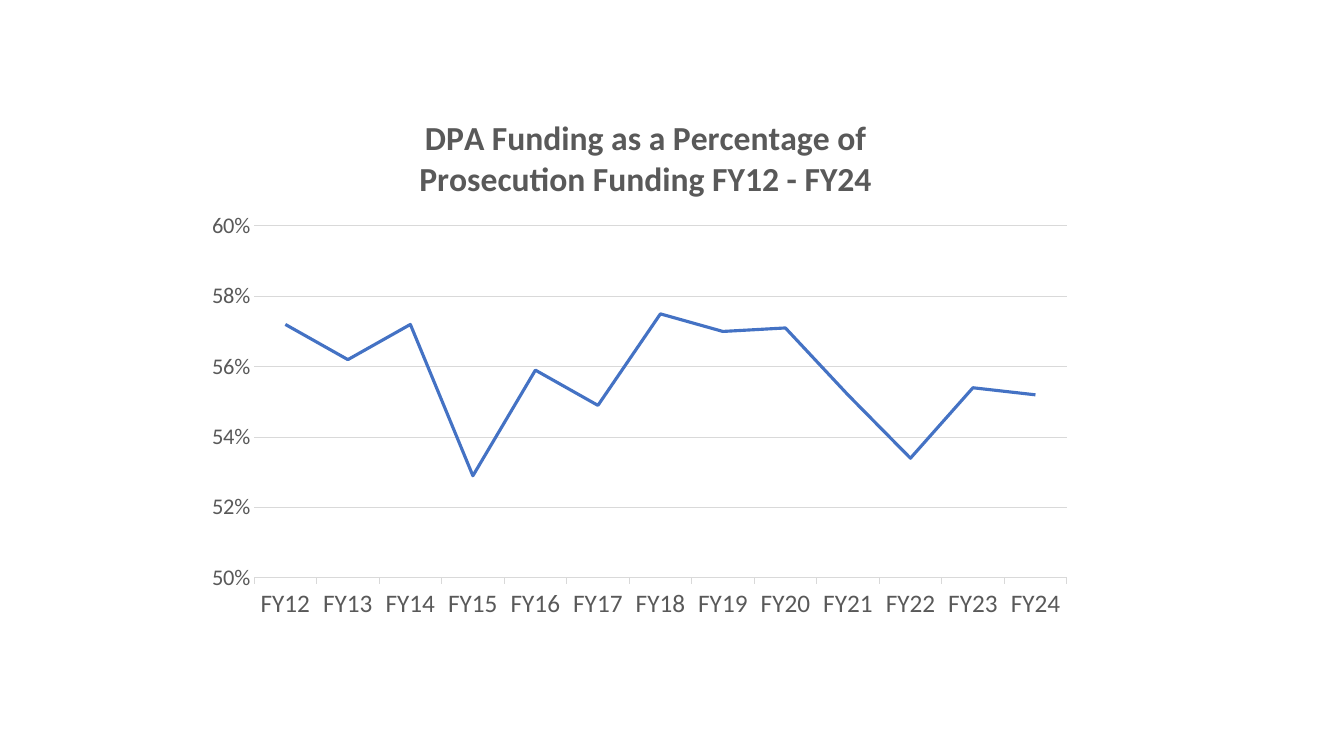
from dataclasses import dataclass

from pptx import Presentation
from pptx.chart.data import CategoryChartData
from pptx.dml.color import RGBColor
from pptx.enum.chart import XL_CHART_TYPE, XL_TICK_MARK
from pptx.oxml import parse_xml
from pptx.oxml.ns import nsdecls
from pptx.text.text import Font
from pptx.util import Inches, Pt

GRAY = RGBColor(0x59, 0x59, 0x59)
PALE = RGBColor(0xD9, 0xD9, 0xD9)
BLUE = RGBColor(0x44, 0x72, 0xC4)
FACE = "Calibri"
WIDE, HIGH = Inches(13.33), Inches(7.5)

TITLE = "DPA Funding as a Percentage of\nProsecution Funding FY12 - FY24"
YEARS = [f"FY{year}" for year in range(12, 25)]
RATES = [0.572, 0.562, 0.572, 0.529, 0.559, 0.549, 0.575,
         0.57, 0.571, 0.552, 0.534, 0.554, 0.552]


@dataclass
class Box:
    """A place given as shares of its parent's size."""
    left: float
    top: float
    width: float = 0
    height: float = 0


FRAME = Box(0.144, 0.123, 0.663, 0.709)
HEAD = Box(0.25, 0.04)
PLOT = Box(0.068, 0.248, 0.912, 0.657)


def style(font: Font, size: float, bold: bool = False) -> None:
    font.name, font.size, font.bold = FACE, Pt(size), bold
    font.color.rgb = GRAY


def place(part, box: Box, index: int) -> None:
    """Give a chart part a manual layout as its child at index."""
    for old in part.findall("{*}layout"):
        part.remove(old)
    target = '<c:layoutTarget val="inner"/>' if box.width else ""
    size = f'<c:w val="{box.width}"/><c:h val="{box.height}"/>' if box.width else ""
    part.insert(index, parse_xml(
        f'<c:layout {nsdecls("c")}><c:manualLayout>{target}'
        '<c:xMode val="edge"/><c:yMode val="edge"/>'
        f'<c:x val="{box.left}"/><c:y val="{box.top}"/>{size}'
        '</c:manualLayout></c:layout>'))


def set_title(chart) -> None:
    chart.has_title = True
    title = chart.chart_title
    title.include_in_layout = False
    title.text_frame.text = TITLE
    for para in title.text_frame.paragraphs:
        for run in para.runs:
            style(run.font, 24, True)
    place(title.element, HEAD, 1)


def set_axes(chart) -> None:
    years, rates = chart.category_axis, chart.value_axis
    style(years.tick_labels.font, 18)
    style(rates.tick_labels.font, 16)
    years.major_tick_mark = XL_TICK_MARK.OUTSIDE
    rates.major_tick_mark = XL_TICK_MARK.NONE
    rates.minimum_scale, rates.maximum_scale, rates.major_unit = 0.5, 0.6, 0.02
    rates.tick_labels.number_format = "0%"
    rates.tick_labels.number_format_is_linked = False
    rates.format.line.fill.background()
    rates.has_major_gridlines = True
    for line in (years.format.line, rates.major_gridlines.format.line):
        line.color.rgb, line.width = PALE, Pt(0.75)


def add_trend(slide) -> None:
    data = CategoryChartData(number_format="0.0%")
    data.categories = YEARS
    data.add_series("Series 1", RATES)
    chart = slide.shapes.add_chart(
        XL_CHART_TYPE.LINE,
        int(WIDE * FRAME.left), int(HIGH * FRAME.top),
        int(WIDE * FRAME.width), int(HIGH * FRAME.height), data).chart
    style(chart.font, 10)
    chart.has_legend = False
    set_title(chart)
    set_axes(chart)
    plot = chart.plots[0]
    plot.vary_by_categories = False
    trend = plot.series[0]
    trend.smooth = False
    trend.format.line.color.rgb = BLUE
    trend.format.line.width = Pt(2.25)
    place(chart.element.chart.plotArea, PLOT, 0)


def main() -> None:
    deck = Presentation()
    deck.slide_width, deck.slide_height = WIDE, HIGH
    add_trend(deck.slides.add_slide(deck.slide_layouts[6]))
    deck.save("out.pptx")


if __name__ == "__main__":
    main()
